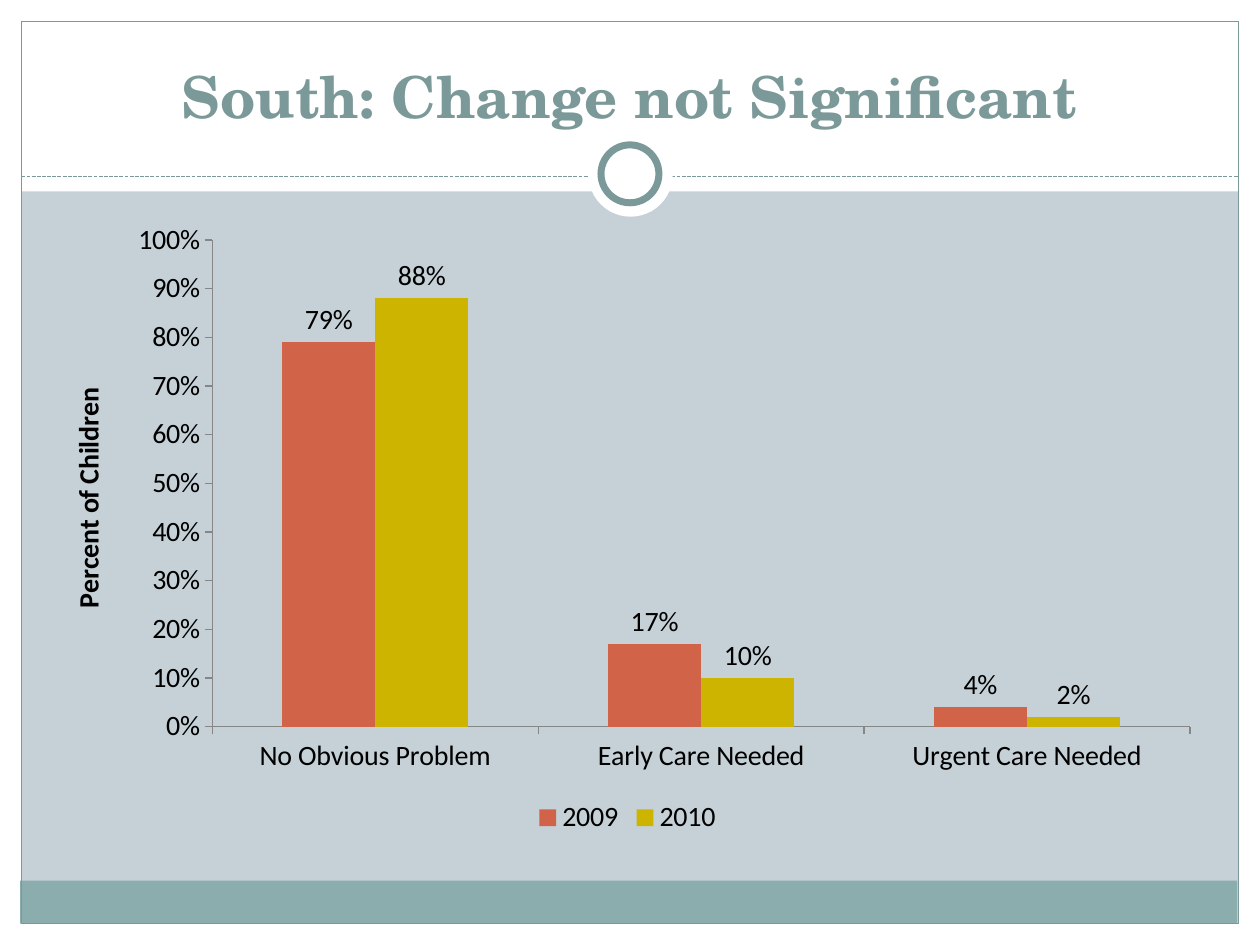
"""Builds the slide on the change in children's care needs in the South."""
from lxml.etree import SubElement
from pptx import Presentation
from pptx.chart.data import CategoryChartData
from pptx.dml.color import RGBColor
from pptx.enum.chart import XL_CHART_TYPE, XL_LABEL_POSITION, XL_LEGEND_POSITION, XL_TICK_MARK
from pptx.enum.dml import MSO_LINE
from pptx.enum.shapes import MSO_CONNECTOR, MSO_SHAPE
from pptx.enum.text import MSO_ANCHOR, PP_ALIGN
from pptx.oxml.ns import qn
from pptx.util import Inches, Pt

WHITE, TEAL, BAND, BACK = "FFFFFF", "7C999A", "8CADAE", "C5D1D7"
BLACK, GRAY, RED, GOLD = "000000", "868686", "D16349", "CCB400"


def color(text):
    """Turn a hex string into a colour."""
    return RGBColor.from_string(text)


class Deck:
    """Holds the style and the current slide."""

    head, body = "TeX Gyre Schola", "Calibri"

    def __init__(self):
        """Start a deck with one title-only slide."""
        self.file = Presentation()
        self.file.slide_width, self.file.slide_height = Inches(10), Inches(7.5)
        self.slide = self.file.slides.add_slide(self.file.slide_layouts[5])
        self.paint(self.slide.background.fill, BACK)

    def paint(self, fill, tone):
        """Fill with a solid colour."""
        fill.solid()
        fill.fore_color.rgb = color(tone)

    def stroke(self, line, tone, width=0.75):
        """Style a line."""
        line.color.rgb = color(tone)
        line.width = Pt(width)

    def shape(self, kind, box, fill=None, line=None, width=0.75):
        """Add a preset shape."""
        shape = self.slide.shapes.add_shape(kind, *map(Inches, box))
        shape.shadow.inherit = False
        if fill:
            self.paint(shape.fill, fill)
        else:
            shape.fill.background()
        if line:
            self.stroke(shape.line, line, width)
        else:
            shape.line.fill.background()

    def rule(self, left, right, top):
        """Add a dashed level line."""
        ends = map(Inches, (left, top, right, top))
        rule = self.slide.shapes.add_connector(MSO_CONNECTOR.STRAIGHT, *ends)
        self.stroke(rule.line, TEAL)
        rule.line.dash_style = MSO_LINE.SQUARE_DOT
        SubElement(rule.element.spPr, qn("a:effectLst"))

    def title(self, text, box):
        """Set the title in front of the frame."""
        title = self.slide.shapes.title
        title.left, title.top, title.width, title.height = map(Inches, box)
        title.element.getparent().append(title.element)
        frame = title.text_frame
        frame.text, frame.vertical_anchor = text, MSO_ANCHOR.BOTTOM
        line = frame.paragraphs[0]
        line.alignment = PP_ALIGN.CENTER
        font = line.font
        font.name, font.size, font.bold = self.head, Pt(33), True
        font.color.rgb = color(TEAL)

    def chart(self, box, cats, rows, label):
        """Add a clustered column chart of percentages."""
        data = CategoryChartData(number_format="0%")
        data.categories = cats
        for name, _, vals in rows:
            data.add_series(name, vals)
        chart = self.slide.shapes.add_chart(
            XL_CHART_TYPE.COLUMN_CLUSTERED, *map(Inches, box), data).chart
        chart.has_title = False
        chart.font.name, chart.font.size = self.body, Pt(16)
        chart.font.color.rgb = color(BLACK)
        chart.has_legend = True
        chart.legend.position = XL_LEGEND_POSITION.BOTTOM
        chart.legend.include_in_layout = False
        plot = chart.plots[0]
        plot.gap_width, plot.overlap, plot.vary_by_categories = 150, 0, False
        for bars, (_, tone, _) in zip(plot.series, rows):
            self.paint(bars.format.fill, tone)
            bars.invert_if_negative = False
            tags = bars.data_labels
            tags.show_value, tags.position = True, XL_LABEL_POSITION.OUTSIDE_END
            tags.number_format, tags.number_format_is_linked = "0%", False
        for axis in (chart.category_axis, chart.value_axis):
            axis.has_major_gridlines = False
            axis.major_tick_mark = XL_TICK_MARK.OUTSIDE
            axis.minor_tick_mark = XL_TICK_MARK.NONE
            self.stroke(axis.format.line, GRAY)
        scale = chart.value_axis
        scale.minimum_scale, scale.maximum_scale, scale.major_unit = 0, 1, 0.1
        scale.tick_labels.number_format = "0%"
        scale.tick_labels.number_format_is_linked = False
        scale.axis_title.text_frame.text = label
        font = scale.axis_title.text_frame.paragraphs[0].font
        font.name, font.size, font.bold = self.body, Pt(16), True
        font.color.rgb = color(BLACK)


def main():
    """Build and save the slide."""
    deck = Deck()
    rect, oval = MSO_SHAPE.RECTANGLE, MSO_SHAPE.OVAL
    for edge in ((0, 7.33, 10, 0.17), (0, 0, 10, 1.52),
                 (0, 0, 0.17, 7.5), (9.83, 0, 0.17, 7.5)):
        deck.shape(rect, edge, WHITE)
    deck.shape(rect, (0.16, 6.99, 9.66, 0.34), BAND)
    deck.shape(rect, (0.17, 0.17, 9.66, 7.16), line=TEAL)
    deck.rule(0.17, 9.83, 1.4)
    deck.shape(oval, (4.67, 1.05, 0.67, 0.67), WHITE)
    deck.shape(oval, (4.77, 1.15, 0.46, 0.46), WHITE, TEAL, 4)
    deck.title("South: Change not Significant", (0.33, 0.25, 9.33, 0.83))
    deck.chart(
        (0.33, 1.67, 9.3, 5),
        ("No Obvious Problem", "Early Care Needed", "Urgent Care Needed"),
        (("2009", RED, (0.79, 0.17, 0.04)), ("2010", GOLD, (0.88, 0.1, 0.02))),
        "Percent of Children")
    deck.file.save("out.pptx")


if __name__ == "__main__":
    main()
